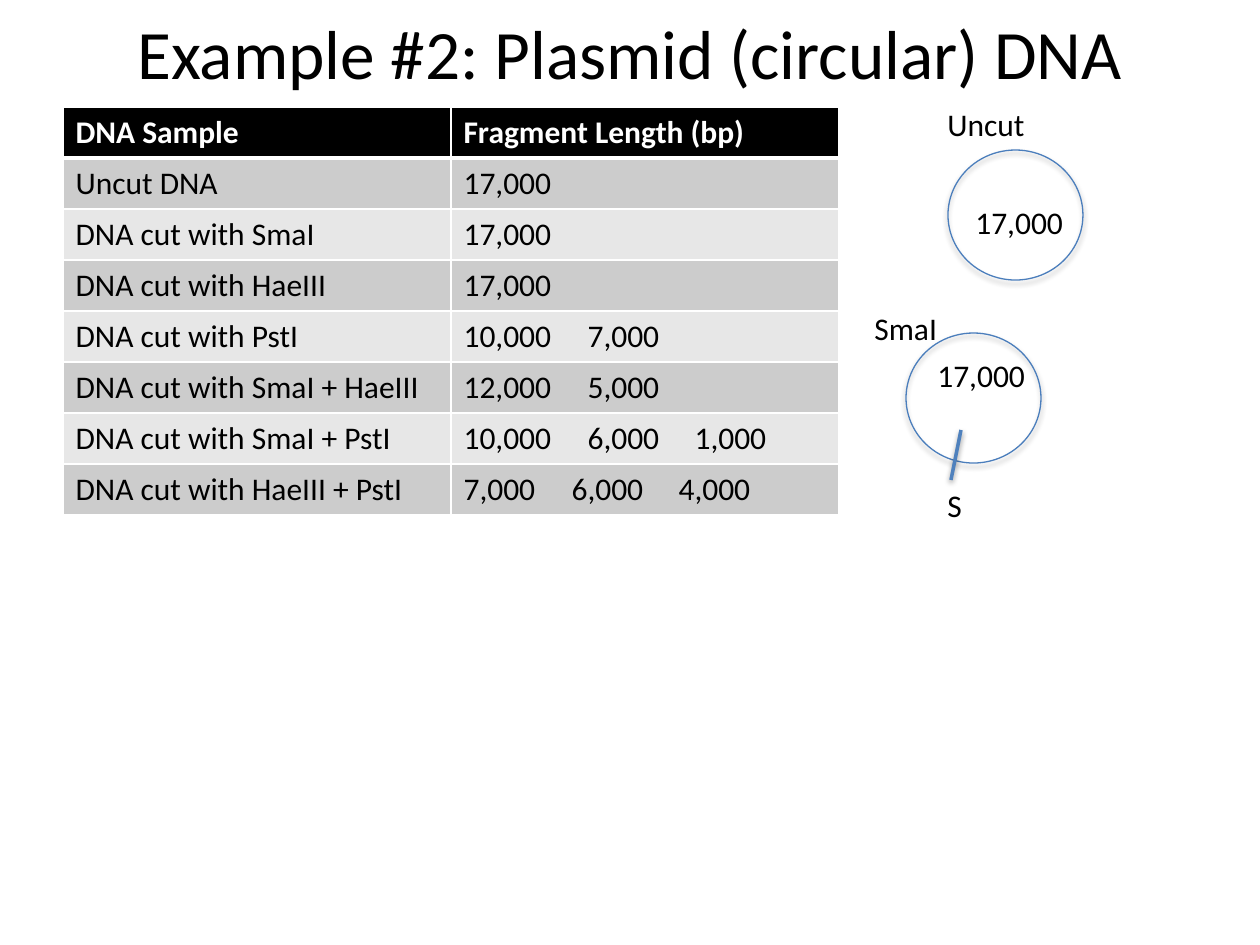
from lxml.etree import SubElement
from pptx import Presentation
from pptx.dml.color import RGBColor
from pptx.enum.shapes import MSO_CONNECTOR, MSO_SHAPE
from pptx.enum.text import MSO_ANCHOR, PP_ALIGN
from pptx.oxml import parse_xml
from pptx.oxml.ns import nsdecls, qn
from pptx.util import Emu, Pt

PX = 914400 / 126
C = {"black": "000000", "white": "FFFFFF", "dark": "CCCCCC", "light": "E7E7E7",
     "circle": "4B7EBC", "cut": "4F81BD"}


def px(*vals):
    return [Emu(round(v * PX)) for v in vals]


def text(tf, t, size=18, color="black", bold=False, align=PP_ALIGN.LEFT, wrap=False, tabs=()):
    tf.word_wrap = wrap
    p = tf.paragraphs[0]
    p.alignment = align
    if tabs:
        tab_list = SubElement(p._p.get_or_add_pPr(), qn("a:tabLst"))
        for pos in px(*tabs):
            SubElement(tab_list, qn("a:tab"), pos=str(pos), algn="l")
    r = p.add_run()
    r.text = t
    r.font.name = "Calibri"
    r.font.size = Pt(size)
    r.font.bold = bold
    r.font.color.rgb = RGBColor.from_string(C[color])


prs = Presentation()
prs.slide_width, prs.slide_height = px(1260, 945)
s = prs.slides.add_slide(prs.slide_layouts[6])

title = s.shapes.add_textbox(*px(63, 4, 1134, 95)).text_frame
title.vertical_anchor = MSO_ANCHOR.MIDDLE
text(title, "Example #2: Plasmid (circular) DNA", size=39.6, align=PP_ALIGN.CENTER, wrap=True)

rows = [
    ("DNA Sample", ["Fragment Length (bp)"]),
    ("Uncut DNA", ["17,000"]),
    ("DNA cut with SmaI", ["17,000"]),
    ("DNA cut with HaeIII", ["17,000"]),
    ("DNA cut with PstI", ["10,000", "7,000"]),
    ("DNA cut with SmaI + HaeIII", ["12,000", "5,000"]),
    ("DNA cut with SmaI + PstI", ["10,000", "6,000", "1,000"]),
    ("DNA cut with HaeIII + PstI", ["7,000", "6,000", "4,000"]),
]
tbl = s.shapes.add_table(len(rows), 2, *px(63, 107, 776, 408)).table
for i, (sample, lengths) in enumerate(rows):
    tbl.rows[i].height = px(51)[0]
    first = 124 if len(lengths[0]) == 6 else 108
    tabs = [first + 107 * k for k in range(len(lengths) - 1)]
    fill = "black" if i == 0 else ("dark" if i % 2 else "light")
    for j, t in enumerate((sample, "\t".join(lengths))):
        cell = tbl.cell(i, j)
        cell.fill.solid()
        cell.fill.fore_color.rgb = RGBColor.from_string(C[fill])
        text(cell.text_frame, t, color="black" if i else "white", bold=i == 0,
             wrap=True, tabs=tabs if j else ())
        tcPr = cell._tc.get_or_add_tcPr()
        for n, side in enumerate("LRTB"):
            thick = (i, side) in ((0, "B"), (1, "T"))
            tcPr.insert(n, parse_xml(
                f'<a:ln{side} {nsdecls("a")} w="{Pt(3 if thick else 1)}"><a:solidFill>'
                f'<a:srgbClr val="{C["white"]}"/></a:solidFill></a:ln{side}>'))

marks = []
for x, y in ((948, 150), (906, 333)):
    sp = s.shapes.add_shape(MSO_SHAPE.OVAL, *px(x, y, 135, 130))
    sp.fill.background()
    marks.append((sp, "circle", 0.75, 1.8, 35))
cut = s.shapes.add_connector(MSO_CONNECTOR.STRAIGHT, *px(961, 430, 951, 480))
marks.append((cut, "cut", 2, 1.6, 38))
for sp, color, width, dist, alpha in marks:
    sp.line.color.rgb = RGBColor.from_string(C[color])
    sp.line.width = Pt(width)
    sp._element.spPr.append(parse_xml(
        f'<a:effectLst {nsdecls("a")}><a:outerShdw blurRad="{Pt(3.1)}" dist="{Pt(dist)}" '
        f'dir="5400000" rotWithShape="0"><a:srgbClr val="{C["black"]}">'
        f'<a:alpha val="{alpha * 1000}"/></a:srgbClr></a:outerShdw></a:effectLst>'))

labels = [
    ("Uncut", 935, 99, 103),
    ("17,000", 963, 197, 113),
    ("SmaI", 862, 303, 88),
    ("17,000", 925, 350, 113),
    ("S", 935, 480, 40),
]
for t, x, y, w in labels:
    text(s.shapes.add_textbox(*px(x, y, w, 51)).text_frame, t)

prs.save("out.pptx")
